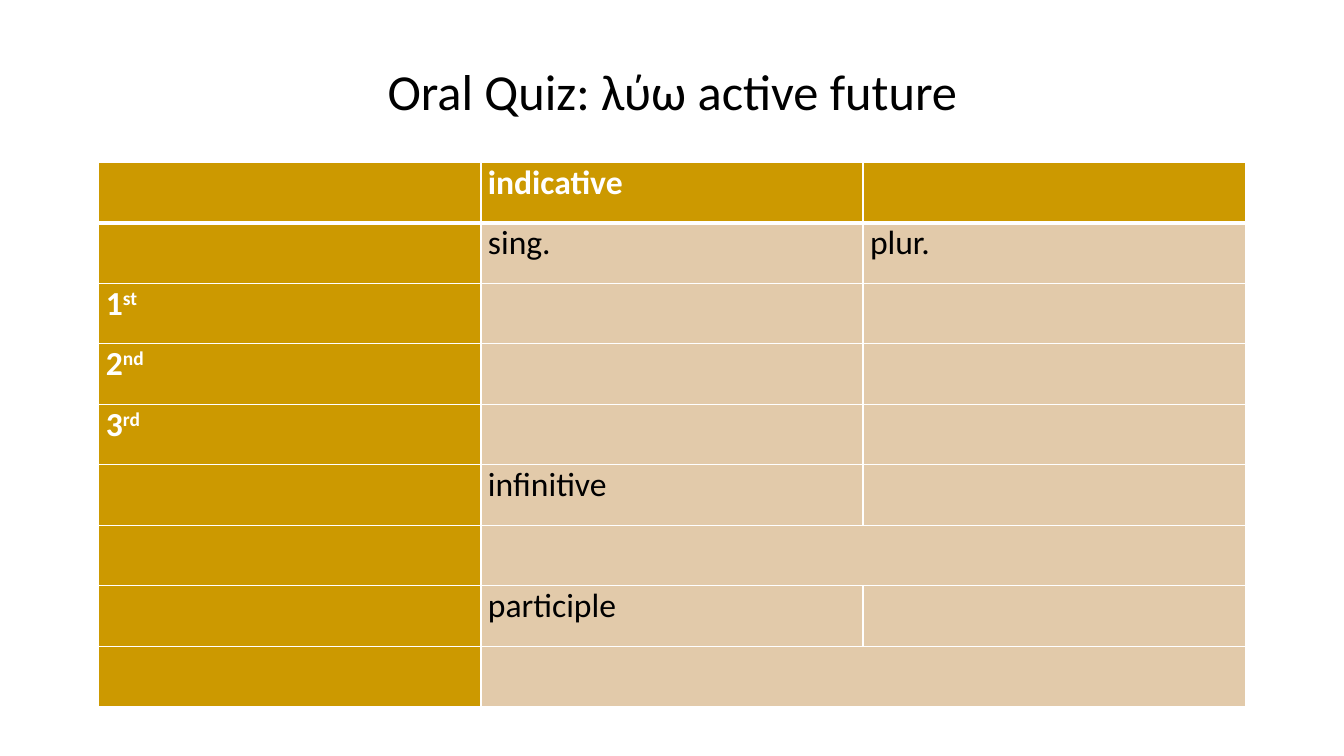
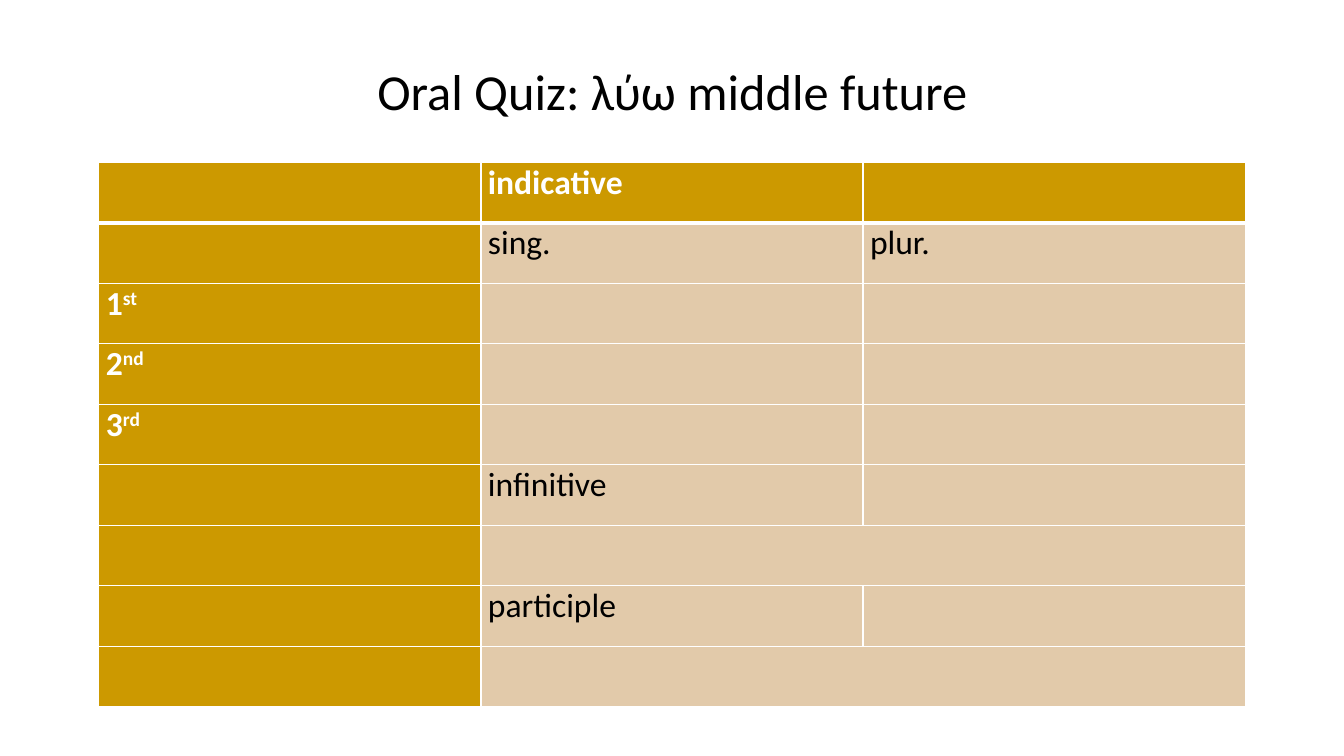
from lxml.etree import SubElement
from pptx import Presentation
from pptx.dml.color import RGBColor
from pptx.enum.text import MSO_ANCHOR, PP_ALIGN
from pptx.oxml.ns import qn
from pptx.util import Inches, Pt

FONT = "Calibri"
GOLD, SAND, WHITE, BLACK = "CC9900", "E2CAAA", "FFFFFF", "000000"
TITLE_BOX = (0.67, 0.08, 12, 1.17)
PARADIGM_BOX = (0.98, 1.61, 11.37, 5.4)
TITLE_ONLY = 5
VOICES = ("active", "middle")
PARADIGM = (
    ("", "indicative", ""),
    ("", "sing.", "plur."),
    (("1", "st"), "", ""),
    (("2", "nd"), "", ""),
    (("3", "rd"), "", ""),
    ("", "infinitive", ""),
    ("", "", ""),
    ("", "participle", ""),
    ("", "", ""),
)
ANSWER_ROWS = (6, 8)


def color(hex_value):
    return RGBColor.from_string(hex_value)


def style_font(font, size, hex_value, bold=False):
    font.name = FONT
    font.size = Pt(size)
    font.bold = bold
    font.color.rgb = color(hex_value)


def add_title(slide, text, box):
    title = slide.shapes.title
    title.left, title.top, title.width, title.height = map(Inches, box)
    frame = title.text_frame
    frame.text = text
    frame.word_wrap = True
    frame.vertical_anchor = MSO_ANCHOR.BOTTOM
    heading = frame.paragraphs[0]
    heading.alignment = PP_ALIGN.CENTER
    style_font(heading.runs[0].font, 36, BLACK)


def add_borders(cell, widths):
    properties = cell._tc.get_or_add_tcPr()
    for side, width in zip("LRTB", widths):
        border = SubElement(properties, qn(f"a:ln{side}"), w=str(Pt(width)))
        fill = SubElement(border, qn("a:solidFill"))
        SubElement(fill, qn("a:srgbClr"), val=WHITE)


def fill_cell(cell, label, row, column):
    is_heading = row == 0 or column == 0
    add_borders(cell, (1, 1, 3 if row == 1 else 1, 3 if row == 0 else 1))
    cell.fill.solid()
    cell.fill.fore_color.rgb = color(GOLD if is_heading else SAND)
    cell.margin_left = cell.margin_right = Inches(0.07)
    cell.margin_top = cell.margin_bottom = 0
    number, suffix = label if isinstance(label, tuple) else (label, "")
    paragraph = cell.text_frame.paragraphs[0]
    paragraph.text = number
    if suffix:
        ordinal = paragraph.add_run()
        ordinal.text = suffix
        ordinal._r.get_or_add_rPr().set("baseline", "30000")
    for run in paragraph.runs:
        style_font(run.font, 24, WHITE if is_heading else BLACK, is_heading)


def add_paradigm(slide, box):
    left, top, width, height = map(Inches, box)
    row_count, column_count = len(PARADIGM), len(PARADIGM[0])
    table = slide.shapes.add_table(
        row_count, column_count, left, top, width, height
    ).table
    for column in table.columns:
        column.width = width // column_count
    for row in table.rows:
        row.height = height // row_count
    for row, labels in enumerate(PARADIGM):
        for column, label in enumerate(labels):
            fill_cell(table.cell(row, column), label, row, column)
    for row in ANSWER_ROWS:
        table.cell(row, 1).merge(table.cell(row, 2))


def add_quiz(deck, voice):
    slide = deck.slides.add_slide(deck.slide_layouts[TITLE_ONLY])
    add_title(slide, f"Oral Quiz: λύω {voice} future", TITLE_BOX)
    add_paradigm(slide, PARADIGM_BOX)


def main():
    deck = Presentation()
    deck.slide_width, deck.slide_height = Inches(13.33), Inches(7.5)
    for voice in VOICES:
        add_quiz(deck, voice)
    deck.save("out.pptx")


if __name__ == "__main__":
    main()
